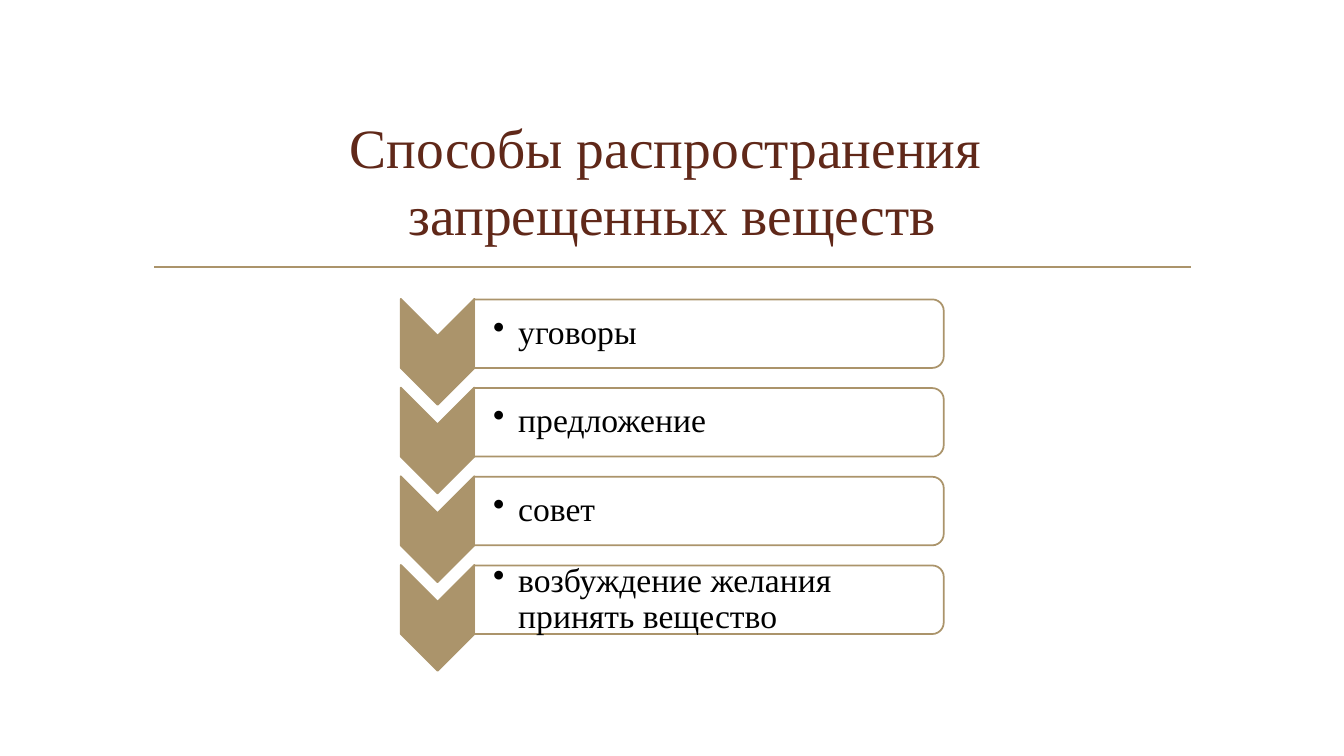
from lxml import etree
from pptx import Presentation
from pptx import util as u
from pptx.dml.color import RGBColor
from pptx.enum import shapes, text
from pptx.oxml.ns import qn

COLORS = {"sand": "AB946B", "title": "602819", "text": "000000", "panel": "FFFFFF"}
FONT = "Times New Roman"
METHODS = ["уговоры", "предложение", "совет", "возбуждение желания принять вещество"]
FIRST_ROW, PITCH = 3.31, 0.88
CHEVRON_X, PANEL_X = 4.34, 7.03

deck = Presentation()
deck.slide_width, deck.slide_height = u.Inches(13.33), u.Inches(7.5)
slide = deck.slides.add_slide(deck.slide_layouts[6])


def add_turned(kind, center_x, center_y, width, height, fill):
    shape = slide.shapes.add_shape(
        kind, u.Inches(center_x - width / 2), u.Inches(center_y - height / 2),
        u.Inches(width), u.Inches(height))
    shape.rotation = 90
    shape.shadow.inherit = False
    shape.fill.solid()
    shape.fill.fore_color.rgb = RGBColor.from_string(COLORS[fill])
    shape.line.color.rgb = RGBColor.from_string(COLORS["sand"])
    shape.line.width = u.Pt(1.25)
    return shape


def add_words(words, left, top, width, height, size, color, insets):
    frame = slide.shapes.add_textbox(
        u.Inches(left), u.Inches(top), u.Inches(width), u.Inches(height)).text_frame
    frame.word_wrap = True
    frame.vertical_anchor = text.MSO_ANCHOR.MIDDLE
    frame.margin_left, frame.margin_top, frame.margin_right, frame.margin_bottom = map(u.Inches, insets)
    paragraph = frame.paragraphs[0]
    paragraph.text = words
    if color == "text":
        properties = paragraph._p.get_or_add_pPr()
        properties.set("marL", str(u.Inches(0.25)))
        properties.set("indent", str(u.Inches(-0.25)))
        etree.SubElement(properties, qn("a:buChar")).set("char", "•")
    paragraph.font.name = FONT
    paragraph.font.size = u.Pt(size)
    paragraph.font.color.rgb = RGBColor.from_string(COLORS[color])
    return paragraph


rule = slide.shapes.add_connector(
    shapes.MSO_CONNECTOR.STRAIGHT, u.Inches(1.53), u.Inches(2.65), u.Inches(11.81), u.Inches(2.65))
rule.line.color.rgb = RGBColor.from_string(COLORS["sand"])
rule.line.width = u.Pt(1.25)
etree.SubElement(rule._element.spPr, qn("a:effectLst"))

heading = add_words("Способы распространения \vзапрещенных веществ",
                    1.42, 1.07, 10.5, 1.43, 39.6, "title", (0.1, 0.05, 0.1, 0.05))
heading.alignment = text.PP_ALIGN.CENTER

for row, method in enumerate(METHODS):
    center = FIRST_ROW + row * PITCH
    add_turned(shapes.MSO_SHAPE.CHEVRON, CHEVRON_X, center + 0.18, 1.05, 0.73, "sand")
    panel = add_turned(shapes.MSO_SHAPE.ROUND_2_SAME_RECTANGLE, PANEL_X, center, 0.68, 4.66, "panel")
    shade = panel._element.spPr.find(".//" + qn("a:srgbClr"))
    etree.SubElement(shade, qn("a:alpha")).set("val", "90000")
    item = add_words(method, 4.7, center - 0.31, 4.63, 0.61, 24, "text", (0.19, 0.02, 0.02, 0.02))
    item.line_spacing = 0.9

deck.save("out.pptx")
